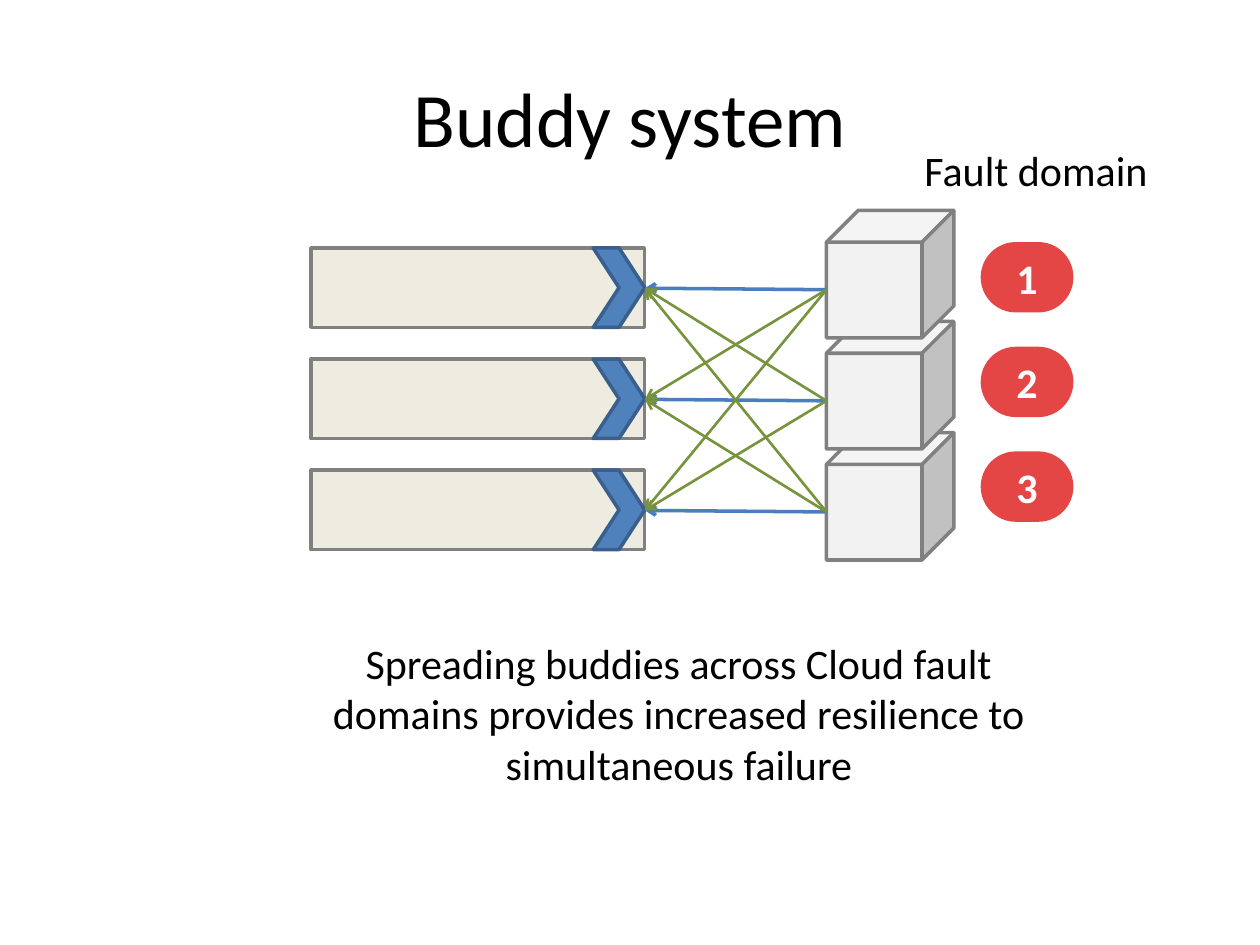
from pptx import Presentation
from pptx.dml.color import RGBColor
from pptx.enum.shapes import MSO_CONNECTOR as CONN, MSO_SHAPE as SHAPE
from pptx.enum.text import MSO_ANCHOR as ANCHOR, PP_ALIGN as ALIGN
from pptx.oxml.ns import qn
from pptx.util import Cm, Pt
from lxml import etree

COLORS = {
    "text": "000000", "white": "FFFFFF", "bar": "EEECE1", "edge": "808080",
    "chevron": "4F81BD", "chevron_edge": "3A5F8C", "cube": "F2F2F2",
    "own": "4B7EBC", "buddy": "77933C", "domain": "E44545",
}
COLORS = {name: RGBColor.from_string(value) for name, value in COLORS.items()}


def add_block(kind, x, y, w, h, fill=None, edge=None):
    sp = s.shapes.add_shape(kind, Cm(x), Cm(y), Cm(w), Cm(h))
    sp.shadow.inherit = False
    if fill:
        sp.fill.solid()
        sp.fill.fore_color.rgb = COLORS[fill]
    else:
        sp.fill.background()
    if edge:
        sp.line.color.rgb = COLORS[edge]
        sp.line.width = Pt(2)
    else:
        sp.line.fill.background()
    return sp


def write(sp, text, align=ALIGN.CENTER, color="text", **font):
    tf = sp.text_frame
    frame = {"word_wrap": True, "vertical_anchor": ANCHOR.MIDDLE, "margin_left": 0,
             "margin_right": 0, "margin_top": 0, "margin_bottom": 0}
    for name, value in frame.items():
        setattr(tf, name, value)
    p = tf.paragraphs[0]
    p.alignment = align
    r = p.add_run()
    r.text = text
    for name, value in {"name": "Calibri", "size": Pt(24), **font}.items():
        setattr(r.font, name, value)
    r.font.color.rgb = COLORS[color]


prs = Presentation()
prs.slide_width, prs.slide_height = Cm(25.4), Cm(19.05)
s = prs.slides.add_slide(prs.slide_layouts[5])

title = s.shapes.title
place = {"left": Cm(1.27), "top": Cm(0.76), "width": Cm(22.86), "height": Cm(3.18)}
for name, value in place.items():
    setattr(title, name, value)
write(title, "Buddy system", size=Pt(44))

caption = add_block(SHAPE.ROUNDED_RECTANGLE, 5.72, 12.24, 15.93, 4.27)
caption.adjustments[0] = 0.105
write(caption, "Spreading buddies across Cloud fault domains provides "
               "increased resilience to simultaneous failure")

ROWS = range(3)
PITCH = 2.24
CUBE_X, CHEVRON_TIP = 16.66, 13.0

for row in ROWS:
    y = 5 + row * PITCH
    add_block(SHAPE.RECTANGLE, 6.27, y, 6.72, 1.6, "bar", "edge")
    add_block(SHAPE.CHEVRON, CHEVRON_TIP - 1.04, y, 1.04, 1.6, "chevron", "chevron_edge")

for row in reversed(ROWS):
    add_block(SHAPE.CUBE, CUBE_X, 4.24 + row * PITCH, 2.57, 2.57, "cube", "edge")

links = [(a, b) for a in ROWS for b in ROWS]
for a, b in sorted(links, key=lambda link: link[0] != link[1]):
    c = s.shapes.add_connector(CONN.STRAIGHT, Cm(CUBE_X), Cm(5.84 + a * PITCH),
                               Cm(CHEVRON_TIP), Cm(5.81 + b * PITCH))
    c.line.color.rgb = COLORS["own" if a == b else "buddy"]
    c.line.width = Pt(2 if a == b else 1.5)
    etree.SubElement(c.line._get_or_add_ln(), qn("a:tailEnd"), type="arrow")
    etree.SubElement(c._element.spPr, qn("a:effectLst"))

for row in ROWS:
    pill = add_block(SHAPE.ROUNDED_RECTANGLE, 19.77, 4.88 + row * 2.11, 1.87, 1.42, "domain")
    pill.adjustments[0] = 0.5
    write(pill, str(row + 1), color="white", bold=True)

heading = add_block(SHAPE.ROUNDED_RECTANGLE, 18.21, 1.96, 5.51, 2.92)
heading.adjustments[0] = 0.5
write(heading, "Fault domain", ALIGN.LEFT)

prs.save("out.pptx")
